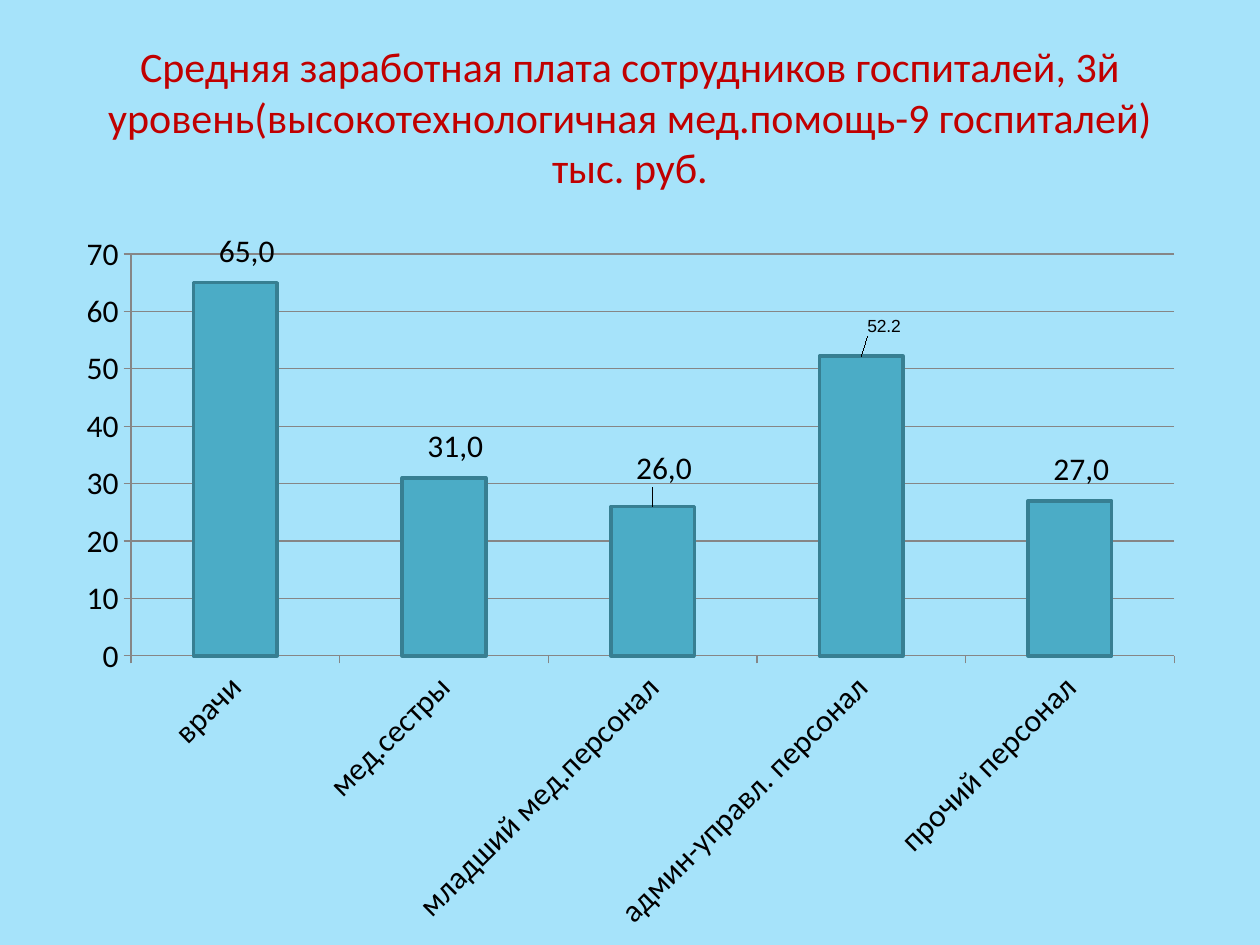
from dataclasses import dataclass

from lxml import etree
from pptx import Presentation
from pptx import util as u
from pptx.chart.data import CategoryChartData
from pptx.dml.color import RGBColor
from pptx.enum import chart as charts, text
from pptx.oxml import ns


@dataclass(frozen=True)
class Theme:
    font: str = "Calibri"
    value_font: str = "Arial"
    background: RGBColor = RGBColor(0xA6, 0xE3, 0xFA)
    heading: RGBColor = RGBColor(0xC0, 0x00, 0x00)
    ink: RGBColor = RGBColor(0x00, 0x00, 0x00)
    bar: RGBColor = RGBColor(0x4B, 0xAC, 0xC6)
    bar_edge: RGBColor = RGBColor(0x37, 0x7F, 0x92)
    grid: RGBColor = RGBColor(0x86, 0x86, 0x86)
    heading_size: int = 24
    chart_size: int = 18
    value_size: int = 10


THEME = Theme()
HEADING = ("Средняя заработная плата сотрудников госпиталей, 3й "
           "уровень(высокотехнологичная мед.помощь-9 госпиталей) тыс. руб.")
SALARIES = [
    ("врачи", 65, "65,0", 0.01, -0.01),
    ("мед.сестры", 31, "31,0", 0.01, -0.01),
    ("младший мед.персонал", 26, "26,0", 0.01, -0.02),
    ("админ-управл. персонал", 52.2, None, 0.02, -0.02),
    ("прочий персонал", 27, "27,0", 0.01, -0.01),
]


def style_font(font, size, color=THEME.ink, name=THEME.font):
    font.name = name
    font.size = u.Pt(size)
    font.bold = False
    font.color.rgb = color


def write(frame, wording, align=text.PP_ALIGN.CENTER, **font_format):
    paragraph = frame.paragraphs[0]
    paragraph.alignment = align
    run = paragraph.add_run()
    run.text = wording
    style_font(run.font, **font_format)


def add_layout(parent, index, **settings):
    for old in parent.findall(ns.qn("c:layout")):
        parent.remove(old)
    layout = etree.Element(ns.qn("c:layout"))
    manual = etree.SubElement(layout, ns.qn("c:manualLayout"))
    for tag, value in settings.items():
        etree.SubElement(manual, ns.qn(f"c:{tag}")).set("val", str(value))
    parent.insert(index, layout)


def add_heading(slide, left, top, width, height):
    frame = slide.shapes.add_textbox(left, top, width, height).text_frame
    frame.word_wrap = True
    frame.vertical_anchor = text.MSO_ANCHOR.MIDDLE
    write(frame, HEADING, size=THEME.heading_size, color=THEME.heading)


def style_axes(chart):
    for axis in (chart.category_axis, chart.value_axis):
        style_font(axis.tick_labels.font, THEME.chart_size)
        axis.major_tick_mark = charts.XL_TICK_MARK.OUTSIDE
        axis.minor_tick_mark = charts.XL_TICK_MARK.NONE
        axis.format.line.color.rgb = THEME.grid
        axis.format.line.width = u.Pt(0.75)
    salary_axis = chart.value_axis
    salary_axis.minimum_scale, salary_axis.maximum_scale = 0, 70
    salary_axis.major_unit = 10
    salary_axis.has_major_gridlines = True
    salary_axis.major_gridlines.format.line.color.rgb = THEME.grid
    salary_axis.major_gridlines.format.line.width = u.Pt(0.75)
    chart.category_axis.has_major_gridlines = False
    staff_text = chart.category_axis.tick_labels.font._element.getparent().getparent().getparent()
    staff_text.find(ns.qn("a:bodyPr")).set("rot", "-2700000")


def label_bars(series):
    for index, (_, _, caption, shift_x, shift_y) in enumerate(SALARIES):
        label = series.points[index].data_label
        if caption:
            write(label.text_frame, caption, size=THEME.chart_size)
        else:
            style_font(label.font, THEME.value_size, name=THEME.value_font)
        label.position = charts.XL_LABEL_POSITION.OUTSIDE_END
        point_label = series._element.find(
            f"{ns.qn('c:dLbls')}/{ns.qn('c:dLbl')}[{index + 1}]")
        add_layout(point_label, 1, x=shift_x, y=shift_y)


def add_salary_chart(slide, left, top, width, height):
    salaries = CategoryChartData()
    salaries.categories = [row[0] for row in SALARIES]
    salaries.add_series("Series 1", [row[1] for row in SALARIES])
    chart = slide.shapes.add_chart(charts.XL_CHART_TYPE.COLUMN_CLUSTERED,
                                   left, top, width, height, salaries).chart
    chart.has_legend = False
    chart.has_title = False
    style_font(chart.font, THEME.chart_size)
    style_axes(chart)
    plot = chart.plots[0]
    plot.gap_width = 150
    plot.vary_by_categories = False
    bars = plot.series[0]
    bars.format.fill.solid()
    bars.format.fill.fore_color.rgb = THEME.bar
    bars.format.line.color.rgb = THEME.bar_edge
    bars.format.line.width = u.Pt(2)
    label_bars(bars)
    plot_area = chart._chartSpace.find(f".//{ns.qn('c:plotArea')}")
    add_layout(plot_area, 0, layoutTarget="inner", xMode="edge", yMode="edge",
               x=0.06, y=0.046, w=0.92, h=0.555)


def main():
    deck = Presentation()
    deck.slide_width, deck.slide_height = u.Cm(25.4), u.Cm(19.05)
    slide = deck.slides.add_slide(deck.slide_layouts[6])
    slide.background.fill.solid()
    slide.background.fill.fore_color.rgb = THEME.background
    margin = u.Cm(1.27)
    width = deck.slide_width - 2 * margin
    chart_top = u.Cm(4.45)
    add_heading(slide, margin, u.Cm(0.76), width, u.Cm(3.18))
    add_salary_chart(slide, margin, chart_top, width, deck.slide_height - chart_top)
    deck.save("out.pptx")


if __name__ == "__main__":
    main()
